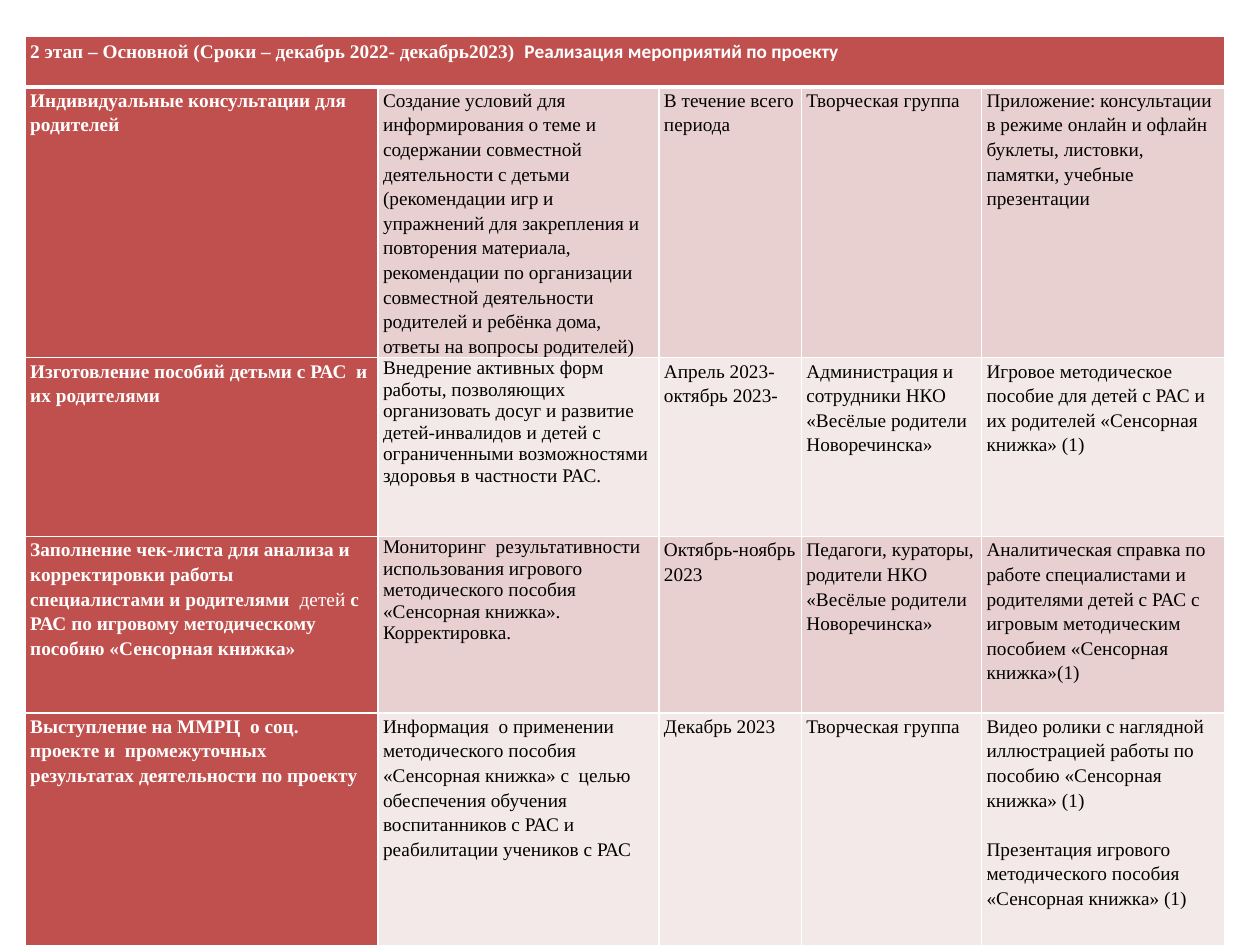
"""Build the slide with the table of the main project stage."""
from lxml import etree
from pptx import Presentation
from pptx import util as u
from pptx.dml.color import RGBColor
from pptx.oxml import ns

RED, ROSE, PALE = "C0504D", "E8D0D0", "F4E9E9"
WHITE, BLACK = "FFFFFF", "000000"
WIDTHS = [2.8, 2.23, 1.13, 1.43, 1.93]
HEIGHTS = [0.4, 2.14, 1.42, 1.4, 1.87]
GROUP = "«Весёлые родители Новоречинска»"


def tint(color, shade):
    color.rgb = RGBColor.from_string(shade)


def write(par, words, size=11, font="Times New Roman", shade=BLACK, bold=False):
    run = par.add_run()
    run.text = words
    run.font.size = u.Pt(size)
    run.font.name = font
    run.font.bold = bold
    tint(run.font.color, shade)


class Deck:
    def __init__(self, line=WHITE, lead=1.15, gap=14):
        self.line, self.lead, self.gap = line, lead, gap
        self.show = Presentation()
        self.show.slide_width, self.show.slide_height = u.Inches(10), u.Inches(7.5)
        self.slide = self.show.slides.add_slide(self.show.slide_layouts[6])

    def grid(self, left, top, widths, heights):
        frame = self.slide.shapes.add_table(
            len(heights), len(widths), u.Inches(left), u.Inches(top),
            u.Inches(sum(widths)), u.Inches(sum(heights)))
        table = frame.table
        table.first_row = table.horz_banding = False
        for col, width in zip(table.columns, widths):
            col.width = u.Inches(width)
        for row, height in zip(table.rows, heights):
            row.height = u.Inches(height)
        return table

    def edge(self, cell, **points):
        props = cell._tc.get_or_add_tcPr()
        for side in "LRTB":
            width = u.Pt(points.get(side, 1))
            line = etree.SubElement(props, ns.qn(f"a:ln{side}"), w=str(width))
            fill = etree.SubElement(line, ns.qn("a:solidFill"))
            etree.SubElement(fill, ns.qn("a:srgbClr"), val=self.line)

    def paint(self, cell, shade, **points):
        self.edge(cell, **points)
        cell.fill.solid()
        tint(cell.fill.fore_color, shade)
        cell.margin_left = cell.margin_right = u.Inches(0.04)
        cell.margin_top = cell.margin_bottom = 0

    def fill(self, cell, pars, lead=None, **style):
        frame = cell.text_frame
        for num, runs in enumerate(pars):
            par = frame.add_paragraph() if num else frame.paragraphs[0]
            par.line_spacing = lead or self.lead
            par.space_before = u.Pt(self.gap if num else 0)
            for words, extra in runs:
                write(par, words, **{**style, **extra})


def plain(*pars):
    return [[(words, {})] for words in pars]


TITLE = [[("2 этап – Основной (Сроки – декабрь 2022- декабрь2023)  ", {}),
          ("Реализация мероприятий по проекту", {"font": "Calibri"})]]
CHECK = [[("Заполнение чек-листа для анализа и корректировки работы специалистами и родителями  ", {}),
          ("детей ", {"bold": False}),
          ("с РАС по игровому методическому пособию «Сенсорная книжка»", {})]]
ROWS = [
    [plain("Индивидуальные консультации для родителей"),
     plain("Создание условий для информирования о теме и содержании совместной деятельности с детьми "
           "(рекомендации игр и упражнений для закрепления и повторения материала, рекомендации по "
           "организации совместной деятельности родителей и ребёнка дома, ответы на вопросы родителей)"),
     plain("В течение всего периода"),
     plain("Творческая группа"),
     plain("Приложение: консультации в режиме онлайн и офлайн буклеты, листовки, памятки, "
           "учебные презентации")],
    [plain("Изготовление пособий детьми с РАС  и их родителями"),
     plain("Внедрение активных форм работы, позволяющих организовать досуг и развитие детей-инвалидов "
           "и детей с ограниченными возможностями здоровья в частности РАС."),
     plain("Апрель 2023-октябрь 2023-"),
     plain(f"Администрация и сотрудники НКО {GROUP}"),
     plain("Игровое методическое пособие для детей с РАС и их родителей «Сенсорная книжка» (1)")],
    [CHECK,
     plain("Мониторинг  результативности использования игрового методического пособия "
           "«Сенсорная книжка». Корректировка."),
     plain("Октябрь-ноябрь 2023"),
     plain(f"Педагоги, кураторы, родители НКО {GROUP}"),
     plain("Аналитическая справка по работе специалистами и родителями детей с РАС с  игровым "
           "методическим пособием «Сенсорная книжка»(1)")],
    [plain("Выступление на ММРЦ  о соц. проекте и  промежуточных результатах деятельности по проекту"),
     plain("Информация  о применении методического пособия «Сенсорная книжка» с  целью обеспечения "
           "обучения воспитанников с РАС и реабилитации учеников с РАС"),
     plain("Декабрь 2023"),
     plain("Творческая группа"),
     plain("Видео ролики с наглядной иллюстрацией работы по  пособию «Сенсорная книжка» (1)",
           "Презентация игрового методического пособия «Сенсорная книжка» (1)")],
]
TIGHT = {(2, 1), (3, 1)}


def main():
    deck = Deck()
    table = deck.grid(0.2, 0.29, WIDTHS, HEIGHTS)
    head = table.cell(0, 0)
    head.merge(table.cell(0, len(WIDTHS) - 1))
    for col in range(len(WIDTHS)):
        deck.paint(table.cell(0, col), RED, B=3)
    deck.fill(head, TITLE, shade=WHITE, bold=True)
    for row, items in enumerate(ROWS, 1):
        band = ROSE if row % 2 else PALE
        for col, pars in enumerate(items):
            cell, first = table.cell(row, col), col == 0
            deck.paint(cell, RED if first else band, T=3 if row == 1 else 1)
            deck.fill(cell, pars, lead=1.0 if (row, col) in TIGHT else None,
                      shade=WHITE if first else BLACK, bold=first)
    deck.show.save("out.pptx")


if __name__ == "__main__":
    main()
